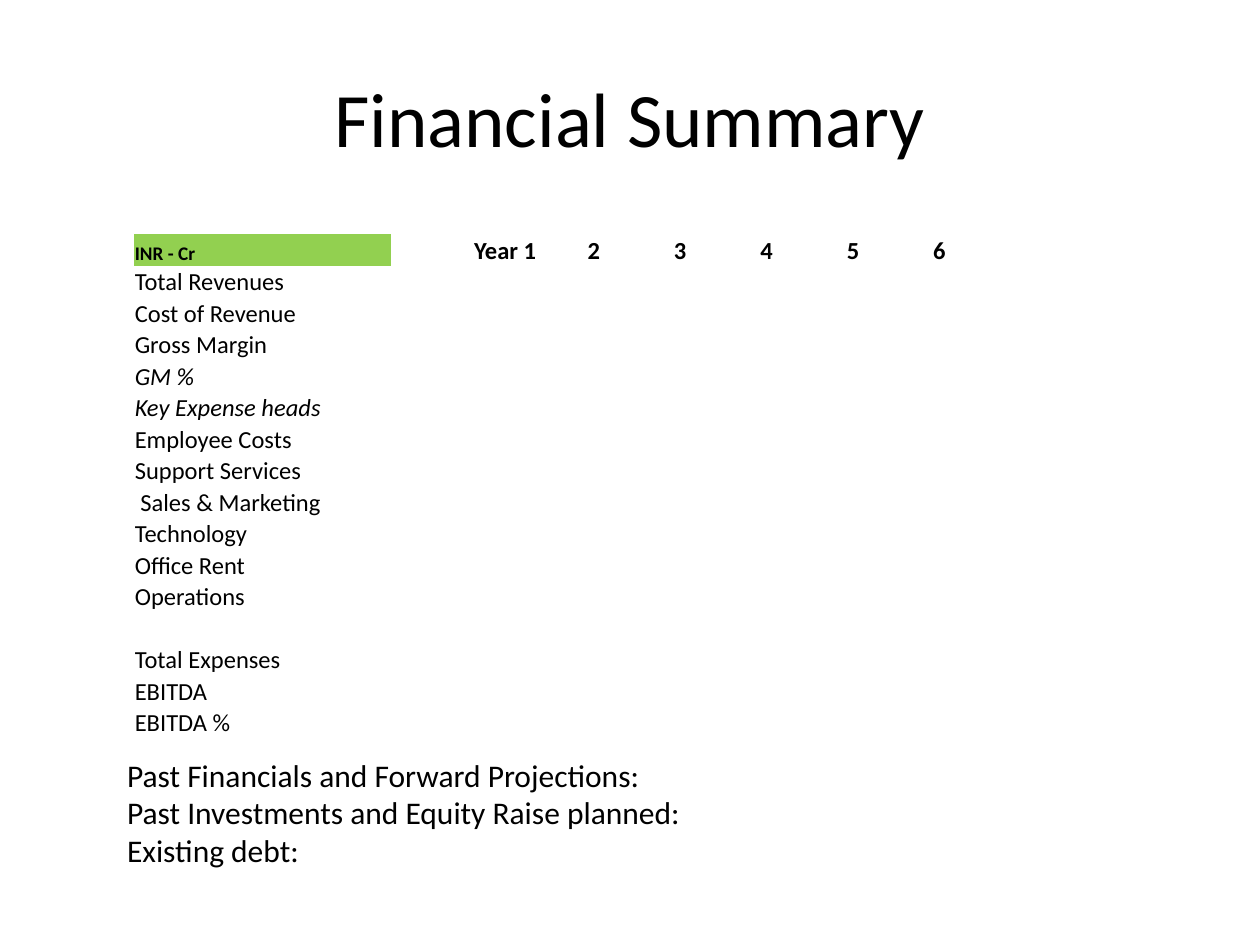
from dataclasses import dataclass
from typing import Any

from pptx import Presentation, util as u
from pptx.dml.color import RGBColor
from pptx.enum import text


@dataclass(frozen=True)
class Theme:
    font: str = "Calibri"
    ink: RGBColor = RGBColor(0x00, 0x00, 0x00)
    unit_fill: RGBColor = RGBColor(0x92, 0xD0, 0x50)
    title_size: int = 44
    note_size: int = 18
    table_size: int = 14
    unit_size: int = 11
    plain_table_style: str = "{2D5ABB26-0587-4C30-8999-92F81FD0307C}"


@dataclass(frozen=True)
class Box:
    left: float
    top: float
    width: float
    height: float

    def place(self, presentation: Any) -> tuple[int, int, int, int]:
        across, down = presentation.slide_width, presentation.slide_height
        return (int(self.left * across), int(self.top * down),
                int(self.width * across), int(self.height * down))


@dataclass(frozen=True)
class Entry:
    label: str
    italic: bool = False


THEME = Theme()
TITLE_BOX = Box(0.05, 0.04, 0.9, 1 / 6)
TABLE_BOX = Box(0.106, 0.248, 0.674, 16 / 30)
NOTES_BOX = Box(0.091, 0.793, 0.835, 0.135)
LEADING_COLUMNS = (204, 55, 72)
TABLE_COLUMNS = 674
YEARS = ("Year 1", "2", "3", "4", "5", "6")
FIRST_YEAR_COLUMN = 2
ENTRIES = (
    Entry("Total Revenues"),
    Entry("Cost of Revenue"),
    Entry("Gross Margin"),
    Entry("GM %", italic=True),
    Entry("Key Expense heads", italic=True),
    Entry("Employee Costs"),
    Entry("Support Services"),
    Entry(" Sales & Marketing"),
    Entry("Technology"),
    Entry("Office Rent"),
    Entry("Operations"),
    Entry(""),
    Entry("Total Expenses"),
    Entry("EBITDA"),
    Entry("EBITDA %"),
)
NOTES = (
    "Past Financials and Forward Projections:",
    "Past Investments and Equity Raise planned:",
    "Existing debt:",
)


def apply(target: Any, values: dict[str, Any]) -> None:
    for name, value in values.items():
        setattr(target, name, value)


def write(paragraph: Any, wording: str, size: int,
          align: Any = text.PP_ALIGN.LEFT, **style: bool) -> None:
    paragraph.alignment = align
    run = paragraph.add_run()
    run.text = wording
    apply(run.font, {"name": THEME.font, "size": u.Pt(size), **style})
    run.font.color.rgb = THEME.ink


def add_title(presentation: Any, slide: Any) -> None:
    title = slide.shapes.title
    apply(title, dict(zip(("left", "top", "width", "height"),
                          TITLE_BOX.place(presentation))))
    title.text_frame.vertical_anchor = text.MSO_ANCHOR.MIDDLE
    write(title.text_frame.paragraphs[0], "Financial Summary",
          THEME.title_size, text.PP_ALIGN.CENTER)


def prepare_cell(cell: Any) -> None:
    apply(cell, {
        "margin_left": u.Inches(0.01),
        "margin_right": u.Inches(0.01),
        "margin_top": u.Inches(0.01),
        "margin_bottom": 0,
        "vertical_anchor": text.MSO_ANCHOR.BOTTOM,
    })
    cell.fill.background()
    ending = cell.text_frame.paragraphs[0]._p.get_or_add_endParaRPr()
    ending.set("sz", str(THEME.table_size * 100))


def add_summary_table(presentation: Any, slide: Any) -> None:
    row_count = len(ENTRIES) + 1
    column_count = FIRST_YEAR_COLUMN + len(YEARS)
    left, top, width, height = TABLE_BOX.place(presentation)
    frame = slide.shapes.add_table(row_count, column_count, left, top, width, height)
    table = frame.table
    apply(table, {"first_row": False, "horz_banding": False})
    table._tbl.tblPr.find("{*}tableStyleId").text = THEME.plain_table_style

    year_count = column_count - len(LEADING_COLUMNS)
    year_share = (TABLE_COLUMNS - sum(LEADING_COLUMNS)) / year_count
    shares = LEADING_COLUMNS + (year_share,) * year_count
    for column, share in zip(table.columns, shares):
        column.width = int(width * share / TABLE_COLUMNS)
    for row in table.rows:
        row.height = height // row_count
    for cell in table.iter_cells():
        prepare_cell(cell)

    unit = table.cell(0, 0)
    unit.fill.solid()
    unit.fill.fore_color.rgb = THEME.unit_fill
    write(unit.text_frame.paragraphs[0], "INR - Cr", THEME.unit_size, bold=True)
    for column, year in enumerate(YEARS, FIRST_YEAR_COLUMN):
        write(table.cell(0, column).text_frame.paragraphs[0], year,
              THEME.table_size, text.PP_ALIGN.CENTER, bold=True)
    for row, entry in enumerate(ENTRIES, 1):
        if entry.label:
            write(table.cell(row, 0).text_frame.paragraphs[0], entry.label,
                  THEME.table_size, italic=entry.italic)


def add_notes(presentation: Any, slide: Any) -> None:
    frame = slide.shapes.add_textbox(*NOTES_BOX.place(presentation)).text_frame
    apply(frame, {"word_wrap": True,
                  "auto_size": text.MSO_AUTO_SIZE.SHAPE_TO_FIT_TEXT})
    for index, note in enumerate(NOTES):
        paragraph = frame.add_paragraph() if index else frame.paragraphs[0]
        write(paragraph, note, THEME.note_size)


def main() -> None:
    presentation = Presentation()
    apply(presentation, {"slide_width": u.Inches(10), "slide_height": u.Inches(7.5)})
    layout = presentation.slide_layouts.get_by_name("Title Only")
    slide = presentation.slides.add_slide(layout)
    add_title(presentation, slide)
    add_summary_table(presentation, slide)
    add_notes(presentation, slide)
    presentation.save("out.pptx")


if __name__ == "__main__":
    main()
